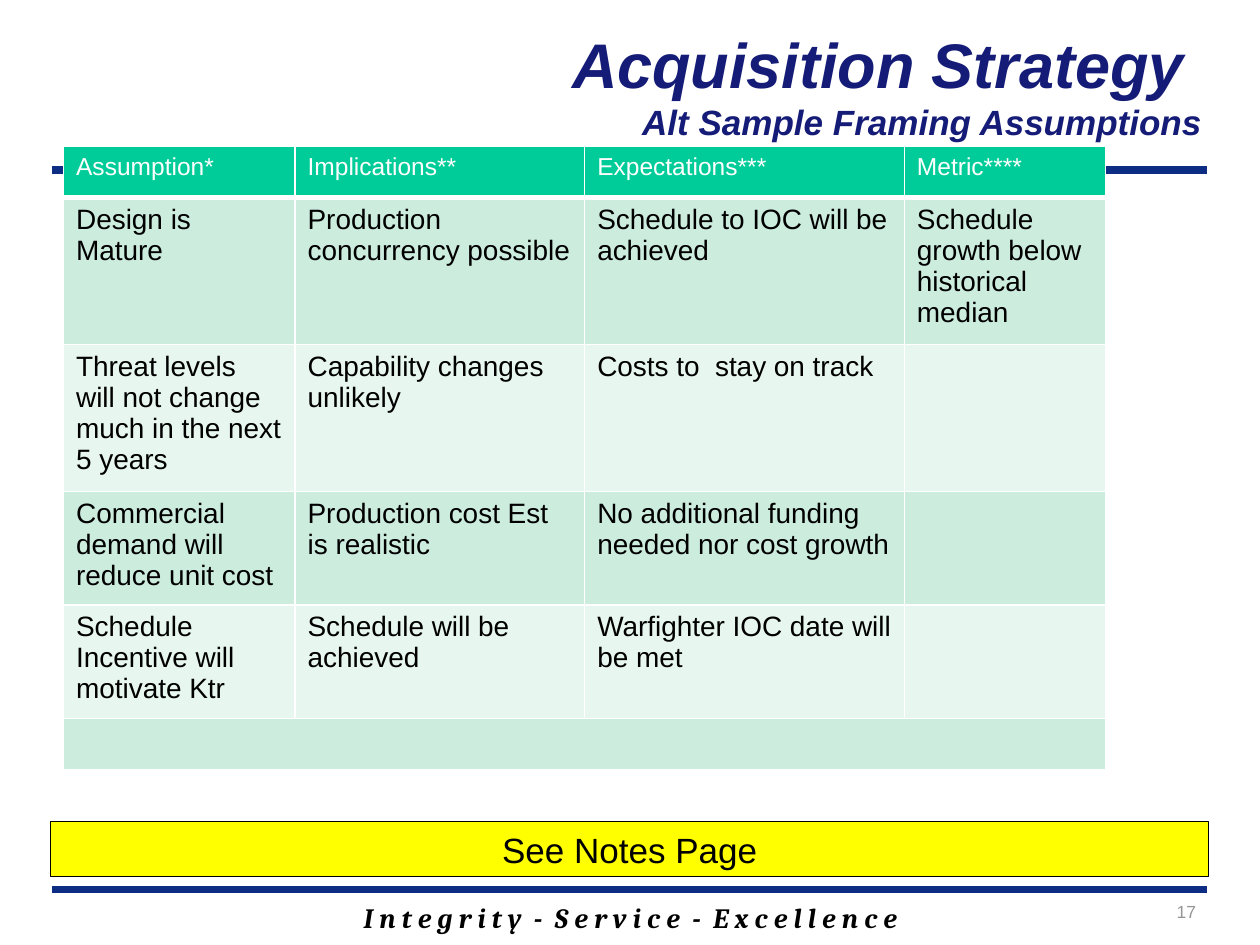
from lxml import etree
from pptx import Presentation
from pptx import util as u
from pptx.dml import color
from pptx.enum import shapes, text
from pptx.oxml import ns

ROWS = [
    ["Assumption*", "Implications**", "Expectations***", "Metric****"],
    ["Design is Mature", "Production concurrency possible",
     "Schedule to IOC will be achieved", "Schedule growth below historical median"],
    ["Threat levels will not change much in the next 5 years",
     "Capability changes unlikely", "Costs to  stay on track", ""],
    ["Commercial demand will reduce unit cost", "Production cost Est is realistic",
     "No additional funding needed nor cost growth", ""],
    ["Schedule Incentive will motivate Ktr", "Schedule will be achieved",
     "Warfighter IOC date will be met", ""],
    ["", "", "", ""],
]
COLUMN_WIDTHS = [132.3, 165.5, 182.7, 115]
ROW_HEIGHT = 29.2
BANDS = ["E7F6EF", "CCECDE"]
RULE_LEFT, RULE_RIGHT = 30, 690
LEFT, CENTER, RIGHT = (text.PP_ALIGN.LEFT, text.PP_ALIGN.CENTER, text.PP_ALIGN.RIGHT)


def rgb(value):
    return color.RGBColor.from_string(value)


def paint(target, value):
    target.solid()
    target.fore_color.rgb = rgb(value)


def add_span(para, content, size, shade="000000", **formats):
    span = para.add_run()
    span.text = content
    span.font.color.rgb = rgb(shade)
    for name, value in {"name": "Arial", "size": u.Pt(size), **formats}.items():
        setattr(span.font, name, value)


def prepare_text(box, align, **formats):
    frame = box.text_frame
    for name, value in {"word_wrap": True, **formats}.items():
        setattr(frame, name, value)
    para = frame.paragraphs[0]
    para.alignment = align
    return para


def add_text_box(page, place, align, **formats):
    box = page.shapes.add_textbox(*map(u.Pt, place))
    return prepare_text(box, align, **formats)


def add_rule(page, top):
    rule = page.shapes.add_connector(
        shapes.MSO_CONNECTOR.STRAIGHT,
        *map(u.Pt, (RULE_LEFT, top, RULE_RIGHT, top)))
    rule.line.color.rgb = rgb("0C2D83")
    rule.line.width = u.Pt(4.5)
    etree.SubElement(rule.element.spPr, ns.qn("a:effectLst"))


def add_banner(page, content):
    banner = page.shapes.add_shape(
        shapes.MSO_SHAPE.RECTANGLE, *map(u.Pt, (29, 469.6, 661.7, 31.5)))
    banner.shadow.inherit = False
    paint(banner.fill, "FFFF00")
    paint(banner.line.fill, "000000")
    banner.line.width = u.Pt(0.75)
    add_span(prepare_text(banner, CENTER), content, 20)


def set_borders(cell, bottom):
    properties = cell._tc.get_or_add_tcPr()
    widths = {"lnL": 1, "lnR": 1, "lnT": 1, "lnB": bottom}
    for index, (side, width) in enumerate(widths.items()):
        border = etree.Element(ns.qn(f"a:{side}"), w=str(u.Pt(width)))
        fill = etree.SubElement(border, ns.qn("a:solidFill"))
        etree.SubElement(fill, ns.qn("a:srgbClr"), val="FFFFFF")
        properties.insert(index, border)


def fill_cell(cell, content, header, fill):
    paint(cell.fill, fill)
    set_borders(cell, 3 if header else 1)
    if content:
        size, shade = (14, "FFFFFF") if header else (16, "000000")
        add_span(cell.text_frame.paragraphs[0], content, size, shade, bold=False)


def add_assumptions_table(page):
    frame = page.shapes.add_table(
        len(ROWS), len(COLUMN_WIDTHS),
        *map(u.Pt, (36.3, 83.8, sum(COLUMN_WIDTHS), ROW_HEIGHT * len(ROWS))))
    table = frame.table
    for column, width in zip(table.columns, COLUMN_WIDTHS):
        column.width = u.Pt(width)
    for index, row in enumerate(ROWS):
        header = index == 0
        fill = "00CC99" if header else BANDS[index % 2]
        for cell, content in zip(table.rows[index].cells, row):
            fill_cell(cell, content, header, fill)
    last = len(ROWS) - 1
    table.cell(last, 0).merge(table.cell(last, len(COLUMN_WIDTHS) - 1))
    frame.height = u.Pt(355.7)


def add_title(page):
    para = add_text_box(page, (44.6, 0, 649.4, 95.8), RIGHT,
                        vertical_anchor=text.MSO_ANCHOR.MIDDLE)
    style = {"shade": "151C77", "bold": True, "italic": True}
    add_span(para, "Acquisition Strategy ", 36, **style)
    para.add_line_break()
    add_span(para, "Alt Sample Framing Assumptions", 20, **style)


def add_footer(page):
    motto = add_text_box(page, (102.2, 511.2, 516.2, 26.6), CENTER,
                         auto_size=text.MSO_AUTO_SIZE.SHAPE_TO_FIT_TEXT)
    add_span(motto, "I n t e g r i t y  -  S e r v i c e  -  E x c e l l e n c e",
             16, name="Cambria", bold=True, italic=True)
    number = add_text_box(page, (594.7, 511.2, 95.8, 23.8), RIGHT)
    add_span(number, "17", 10, "969696")


def main():
    deck = Presentation()
    deck.slide_width, deck.slide_height = u.Pt(720), u.Pt(540)
    page = deck.slides.add_slide(deck.slide_layouts[6])
    for top in (508.3, 97.2):
        add_rule(page, top)
    add_title(page)
    add_assumptions_table(page)
    add_footer(page)
    add_banner(page, "See Notes Page")
    deck.save("out.pptx")


if __name__ == "__main__":
    main()
